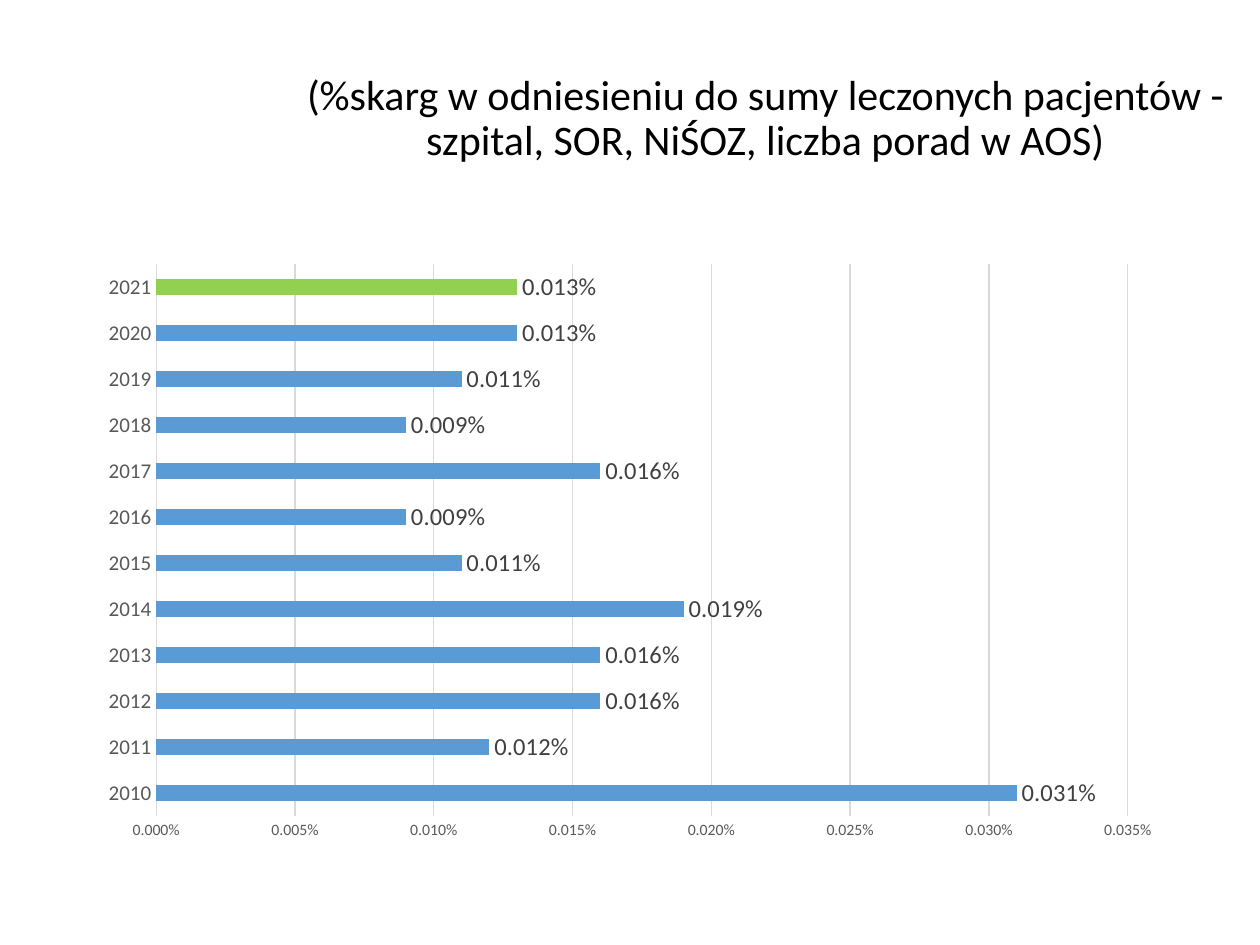
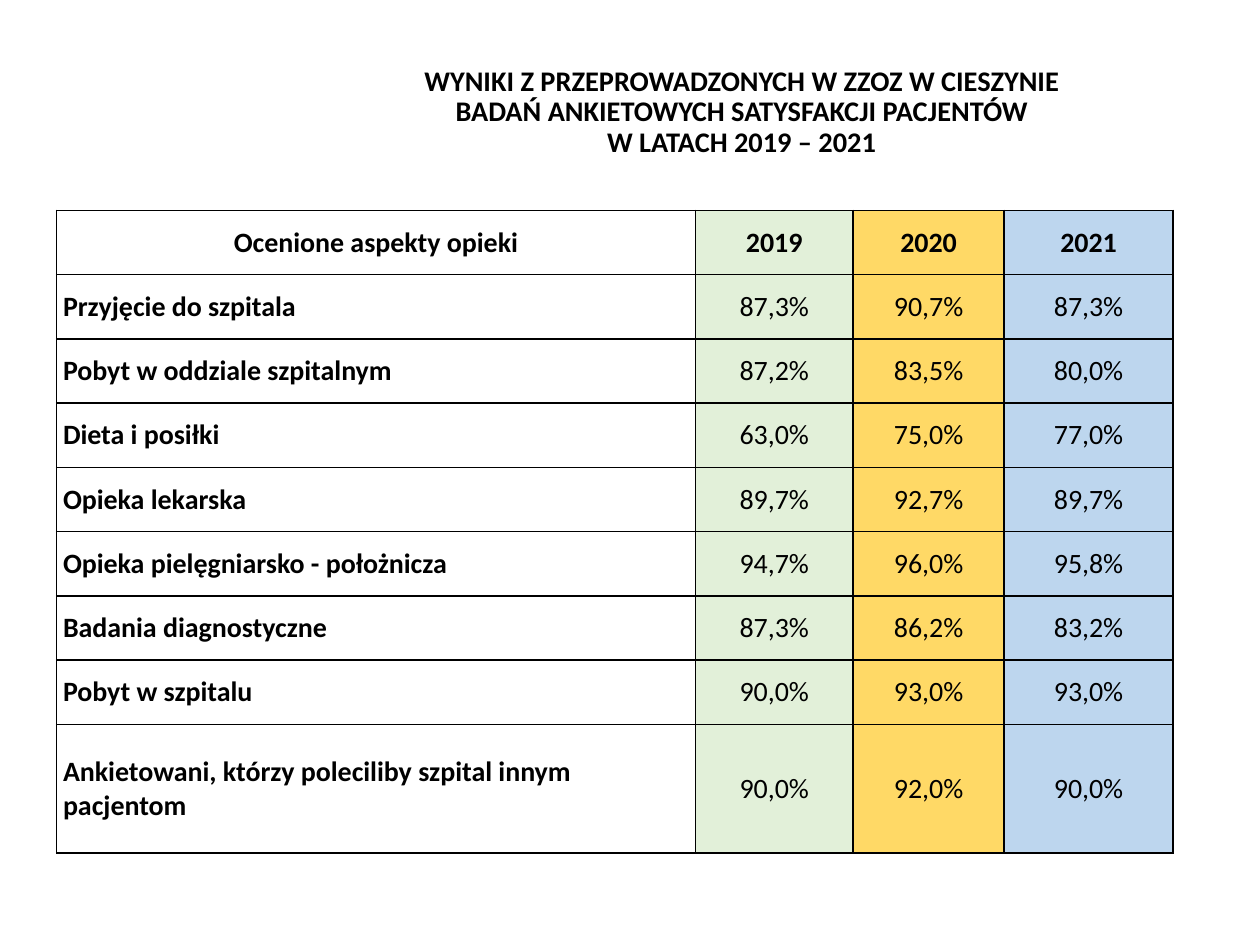
from dataclasses import dataclass

from lxml.etree import SubElement
from pptx import Presentation
from pptx.chart.data import CategoryChartData
from pptx.dml.color import RGBColor
from pptx.enum.chart import XL_CHART_TYPE as ChartType
from pptx.enum.chart import XL_LABEL_POSITION as LabelPosition
from pptx.enum.chart import XL_TICK_MARK as TickMark
from pptx.enum.text import MSO_ANCHOR as Anchor
from pptx.enum.text import MSO_AUTO_SIZE as AutoSize
from pptx.enum.text import PP_ALIGN as Align
from pptx.oxml.ns import qn
from pptx.util import Inches, Pt


@dataclass(frozen=True)
class Theme:
    font: str = "Calibri"
    text: str = "000000"
    label: str = "404040"
    axis: str = "595959"
    grid: str = "D9D9D9"
    bar: str = "5B9BD5"
    latest_bar: str = "92D050"
    columns: tuple = ("FFFFFF", "E2F0D9", "FFD966", "BDD6EE")
    title_size: float = 24
    survey_title_size: float = 16.2
    table_size: float = 16
    chart_size: float = 10
    label_size: float = 14
    year_size: float = 12
    scale_size: float = 9


THEME = Theme()

COMPLAINT_SHARES = {
    2010: 0.00031, 2011: 0.00012, 2012: 0.00016, 2013: 0.00016,
    2014: 0.00019, 2015: 0.00011, 2016: 0.00009, 2017: 0.00016,
    2018: 0.00009, 2019: 0.00011, 2020: 0.00013, 2021: 0.00013,
}

SURVEY_ROWS = [
    ("Ocenione aspekty opieki", "2019", "2020", "2021"),
    ("Przyjęcie do szpitala", "87,3%", "90,7%", "87,3%"),
    ("Pobyt w oddziale szpitalnym", "87,2%", "83,5%", "80,0%"),
    ("Dieta i posiłki", "63,0%", "75,0%", "77,0%"),
    ("Opieka lekarska", "89,7%", "92,7%", "89,7%"),
    ("Opieka pielęgniarsko - położnicza", "94,7%", "96,0%", "95,8%"),
    ("Badania diagnostyczne", "87,3%", "86,2%", "83,2%"),
    ("Pobyt w szpitalu", "90,0%", "93,0%", "93,0%"),
    ("Ankietowani, którzy poleciliby szpital innym pacjentom", "90,0%", "92,0%", "90,0%"),
]
COLUMN_WIDTHS = (5.07, 1.25, 1.2, 1.34)
ROW_HEIGHT = 0.51


def style_font(font, size, color=THEME.text, bold=False):
    font.name = THEME.font
    font.size = Pt(size)
    font.bold = bold
    font.color.rgb = RGBColor.from_string(color)


def add_titled_slide(presentation, text, box, size, bold=False):
    """Add a title-only slide; box is left, top, width, height in inches."""
    slide = presentation.slides.add_slide(presentation.slide_layouts[5])
    title = slide.shapes.title
    title.left, title.top, title.width, title.height = map(Inches, box)
    frame = title.text_frame
    frame.text = text
    frame.word_wrap = True
    frame.auto_size = AutoSize.NONE
    frame.vertical_anchor = Anchor.MIDDLE
    paragraph = frame.paragraphs[0]
    paragraph.alignment = Align.CENTER
    paragraph.line_spacing = 0.9
    for run in paragraph.runs:
        style_font(run.font, size, bold=bold)
    return slide


def style_line(line, color):
    line.color.rgb = RGBColor.from_string(color)
    line.width = Pt(0.75)


def style_axis(axis, size):
    axis.major_tick_mark = axis.minor_tick_mark = TickMark.NONE
    style_font(axis.tick_labels.font, size, THEME.axis)


def fill_solid(fill, color):
    fill.solid()
    fill.fore_color.rgb = RGBColor.from_string(color)


def add_complaints_chart(slide):
    data = CategoryChartData(number_format="0.000%")
    data.categories = [str(year) for year in COMPLAINT_SHARES]
    data.add_series("Series 1", list(COMPLAINT_SHARES.values()))
    chart = slide.shapes.add_chart(
        ChartType.BAR_CLUSTERED, Inches(0.69), Inches(2), Inches(8.62), Inches(4.76), data
    ).chart
    chart.has_legend = False
    chart.has_title = False
    style_font(chart.font, THEME.chart_size)

    years, shares = chart.category_axis, chart.value_axis
    style_axis(years, THEME.year_size)
    style_line(years.format.line, THEME.grid)
    style_axis(shares, THEME.scale_size)
    shares.format.line.fill.background()
    shares.has_major_gridlines = True
    style_line(shares.major_gridlines.format.line, THEME.grid)
    shares.minimum_scale = 0
    shares.maximum_scale = 0.00035
    shares.major_unit = 0.00005
    shares.tick_labels.number_format = "0.000%"
    shares.tick_labels.number_format_is_linked = False

    plot = chart.plots[0]
    plot.gap_width = 182
    plot.vary_by_categories = False
    series = plot.series[0]
    series.invert_if_negative = False
    fill_solid(series.format.fill, THEME.bar)
    latest = series.points[len(COMPLAINT_SHARES) - 1]
    fill_solid(latest.format.fill, THEME.latest_bar)
    labels = series.data_labels
    labels.show_value = True
    labels.position = LabelPosition.OUTSIDE_END
    labels.number_format = "0.000%"
    labels.number_format_is_linked = False
    style_font(labels.font, THEME.label_size, THEME.label)


def add_cell_borders(cell):
    properties = cell._tc.get_or_add_tcPr()
    for side in ("a:lnL", "a:lnR", "a:lnT", "a:lnB"):
        line = SubElement(properties, qn(side), w=str(Pt(1)))
        fill = SubElement(line, qn("a:solidFill"))
        SubElement(fill, qn("a:srgbClr"), val=THEME.text)


def fill_cell(cell, text, color, alignment, bold):
    add_cell_borders(cell)
    fill_solid(cell.fill, color)
    cell.margin_left = cell.margin_right = Inches(0.05)
    cell.margin_top = cell.margin_bottom = 0
    cell.vertical_anchor = Anchor.MIDDLE
    cell.text_frame.text = text
    paragraph = cell.text_frame.paragraphs[0]
    paragraph.alignment = alignment
    style_font(paragraph.runs[0].font, THEME.table_size, bold=bold)


def add_survey_table(slide):
    heights = [ROW_HEIGHT] * (len(SURVEY_ROWS) - 1) + [2 * ROW_HEIGHT]
    table = slide.shapes.add_table(
        len(SURVEY_ROWS), len(COLUMN_WIDTHS), Inches(0.45), Inches(1.67),
        Inches(sum(COLUMN_WIDTHS)), Inches(sum(heights)),
    ).table
    table.horz_banding = False
    for column, width in zip(table.columns, COLUMN_WIDTHS):
        column.width = Inches(width)
    for row, height in zip(table.rows, heights):
        row.height = Inches(height)
    for i, values in enumerate(SURVEY_ROWS):
        for j, (value, color) in enumerate(zip(values, THEME.columns)):
            is_header, is_aspect = i == 0, j == 0
            alignment = Align.LEFT if is_aspect and not is_header else Align.CENTER
            fill_cell(table.cell(i, j), value, color, alignment, is_header or is_aspect)


def main():
    presentation = Presentation()
    presentation.slide_width, presentation.slide_height = Inches(10), Inches(7.5)

    complaints = add_titled_slide(
        presentation,
        "(%skarg w odniesieniu do sumy leczonych pacjentów - "
        "szpital, SOR, NiŚOZ, liczba porad w AOS)",
        (2.32, 0.47, 7.51, 0.95), THEME.title_size,
    )
    add_complaints_chart(complaints)

    survey = add_titled_slide(
        presentation,
        "WYNIKI Z PRZEPROWADZONYCH W ZZOZ W CIESZYNIE\v"
        "BADAŃ ANKIETOWYCH SATYSFAKCJI PACJENTÓW\v"
        "W LATACH 2019 – 2021",
        (1.84, 0.24, 7.84, 1.31), THEME.survey_title_size, bold=True,
    )
    survey.shapes.title.text_frame.margin_left = Inches(0.35)
    add_survey_table(survey)

    presentation.save("out.pptx")


if __name__ == "__main__":
    main()
